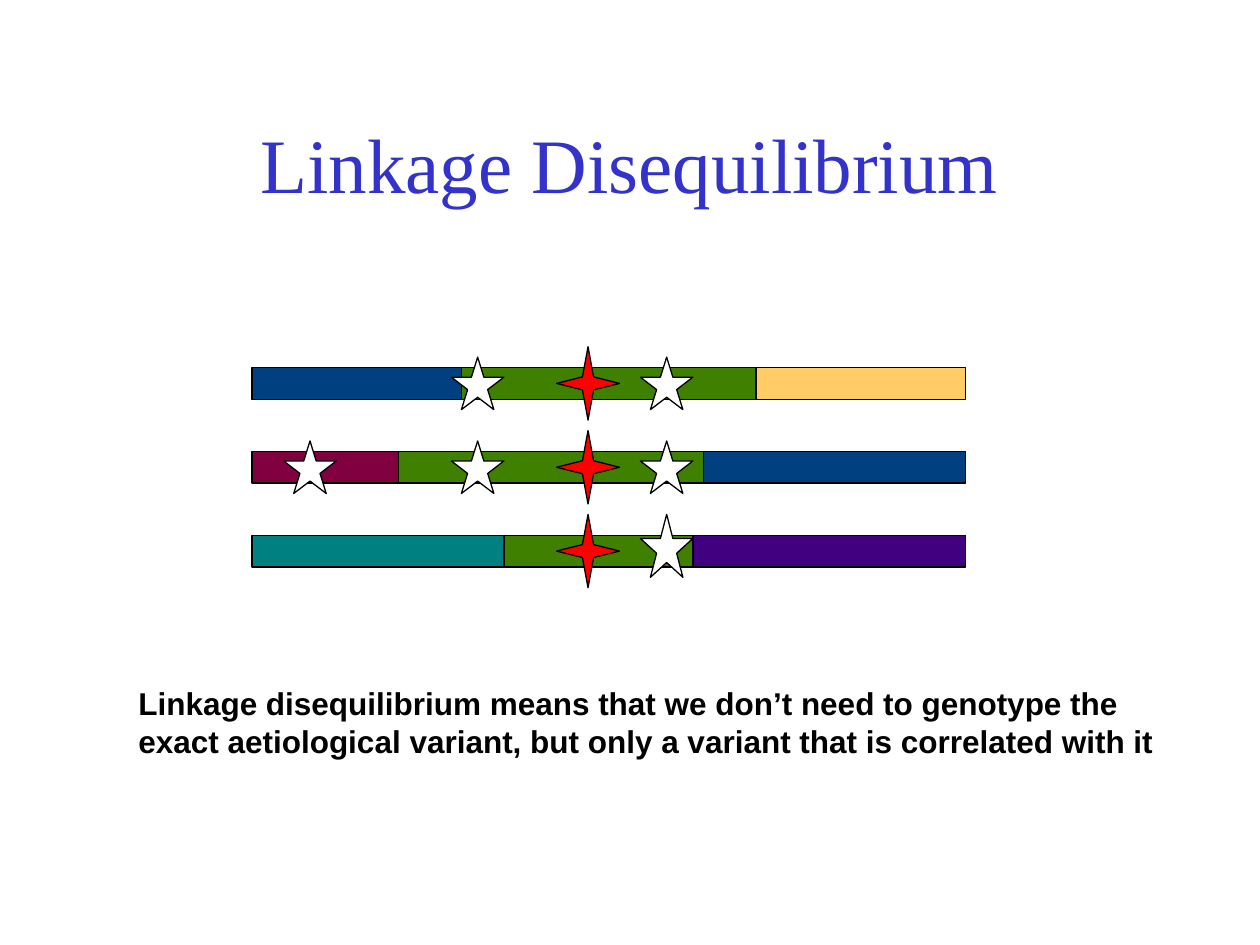
from pptx import Presentation
from pptx.dml.color import RGBColor
from pptx.enum.shapes import MSO_SHAPE as SHAPE
from pptx.enum.text import MSO_ANCHOR as ANCHOR, MSO_AUTO_SIZE as AUTO, PP_ALIGN as ALIGN
from pptx.util import Cm, Pt


def rgb(value):
    return RGBColor.from_string(value)


class SlideBuilder:
    """Holds the style and the current slide."""
    TITLE_FONT, BODY_FONT = "Times New Roman", "Arial"
    BLACK, WHITE, RED, TITLE_BLUE = "000000", "FFFFFF", "FF0000", "3333CC"
    LINE = Pt(0.75)

    def __init__(self, prs):
        self.s = prs.slides.add_slide(prs.slide_layouts[5])

    def style(self, p, font, size, color, bold=False):
        p.font.name, p.font.size, p.font.bold = font, Pt(size), bold
        p.font.color.rgb = rgb(color)

    def title(self, text, x, y, w, h):
        sp = self.s.shapes.title
        sp.left, sp.top, sp.width, sp.height = Cm(x), Cm(y), Cm(w), Cm(h)
        tf = sp.text_frame
        tf.text, tf.vertical_anchor = text, ANCHOR.MIDDLE
        p = tf.paragraphs[0]
        p.alignment = ALIGN.CENTER
        self.style(p, self.TITLE_FONT, 44, self.TITLE_BLUE)

    def caption(self, text, x, y, w, h):
        tf = self.s.shapes.add_textbox(Cm(x), Cm(y), Cm(w), Cm(h)).text_frame
        tf.word_wrap, tf.auto_size = True, AUTO.SHAPE_TO_FIT_TEXT
        tf.text = text
        self.style(tf.paragraphs[0], self.BODY_FONT, 18, self.BLACK, bold=True)

    def group(self):
        return self.s.shapes.add_group_shape().shapes

    def shape(self, shapes, kind, x, y, w, h, fill):
        sp = shapes.add_shape(kind, Cm(x), Cm(y), Cm(w), Cm(h))
        sp.shadow.inherit = False
        sp.fill.solid()
        sp.fill.fore_color.rgb = rgb(fill)
        sp.line.color.rgb = rgb(self.BLACK)
        sp.line.width = self.LINE
        return sp

    def segment(self, shapes, left, right, y, fill):
        self.shape(shapes, SHAPE.RECTANGLE, left, y, right - left, BAR_H, fill)

    def variant(self, shapes, y):
        sp = self.shape(shapes, SHAPE.STAR_4_POINT, 11.22, y - 0.42, 1.27, 1.48, self.RED)
        sp.adjustments[0] = 0.125

    def marker(self, shapes, x, y, h=1.06):
        self.shape(shapes, SHAPE.STAR_5_POINT, x, y, 1.06, h, self.WHITE)


# Chromosome rows: the shared green segment lies between its two breakpoints
BAR_LEFT, BAR_RIGHT, BAR_H = 5.08, 19.47, 0.64
ROW_TOP, ROW_PITCH = 7.41, 1.69
GREEN = "408000"
ROWS = [  # left colour, green start, green end, right colour
    ("004080", 9.31, 15.24, "FFCC66"),
    ("800040", 8.04, 14.18, "004080"),
    ("008080", 10.16, 13.97, "400080"),
]


def main():
    prs = Presentation()
    prs.slide_width, prs.slide_height = Cm(25.4), Cm(19.05)
    b = SlideBuilder(prs)
    b.title("Linkage Disequilibrium", 1.9, 1.69, 21.59, 3.18)
    tops = [ROW_TOP + i * ROW_PITCH for i in range(len(ROWS))]

    # Chromosomes with the aetiological variant
    bars = b.group()
    for y, (left_fill, start, end, right_fill) in zip(tops, ROWS):
        b.segment(bars, start, end, y, GREEN)
        b.segment(bars, BAR_LEFT, start, y, left_fill)
        b.segment(bars, end, BAR_RIGHT, y, right_fill)
        b.variant(bars, y)

    # Marker on the right, carried by all rows and taller on the last
    right = b.group()
    for y in tops[:2]:
        b.marker(right, 12.91, y - 0.21)
    b.marker(right, 12.91, tops[2] - 0.42, 1.27)

    # Marker on one row only
    b.marker(b.s.shapes, 5.72, tops[1] - 0.21)

    # Marker on the left, carried by the first two rows
    left = b.group()
    for y in tops[:2]:
        b.marker(left, 9.1, y - 0.21)

    b.caption("Linkage disequilibrium means that we don’t need to genotype the exact "
              "aetiological variant, but only a variant that is correlated with it",
              2.54, 13.67, 21.28, 1.8)
    prs.save("out.pptx")


if __name__ == "__main__":
    main()
